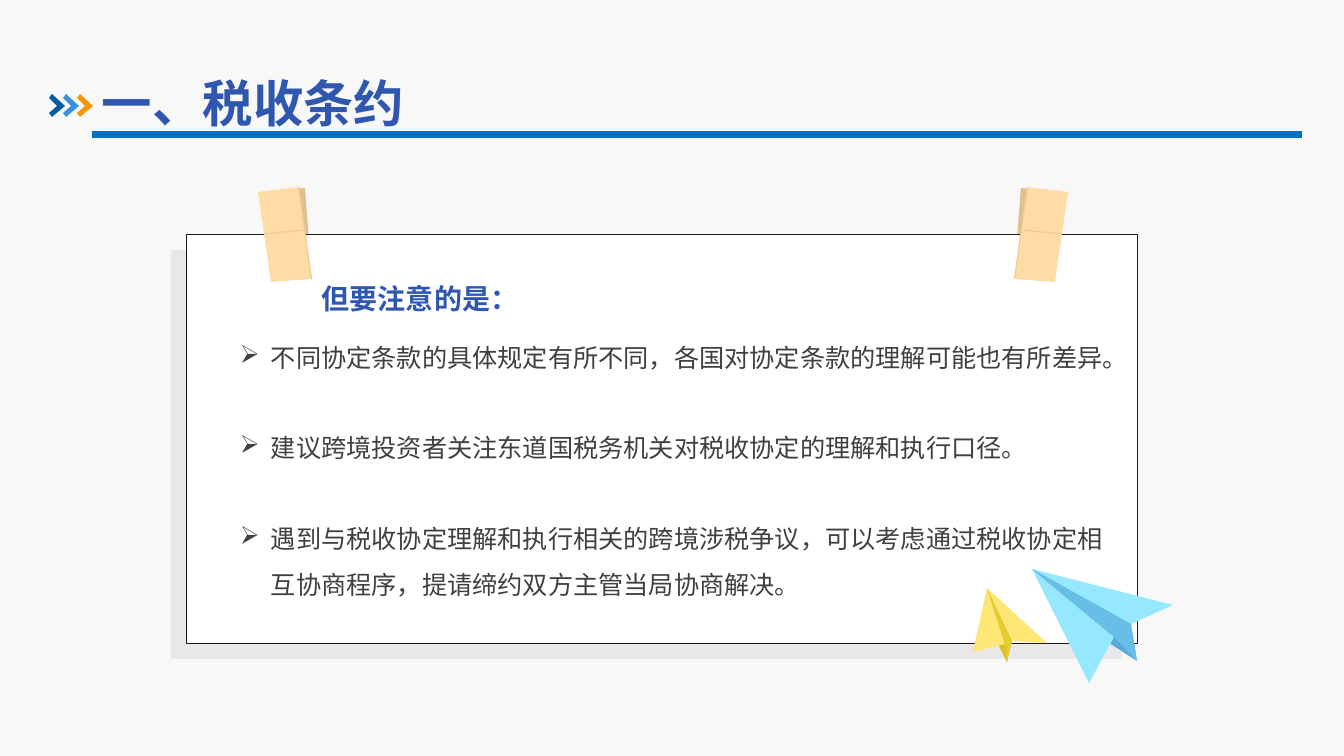
"""Build the tax treaty slide with its pinned note card and paper planes."""
from lxml import etree
from pptx import Presentation
from pptx.dml.color import RGBColor
from pptx.enum.shapes import MSO_CONNECTOR, MSO_SHAPE
from pptx.oxml.ns import qn
from pptx.util import Emu, Pt

STRAIGHT = MSO_CONNECTOR.STRAIGHT
RECTANGLE = MSO_SHAPE.RECTANGLE
EMU_PER_PX = 914400 / 100.8
FONT = "Noto Sans CJK SC"

BACKGROUND = RGBColor(0xF8, 0xF8, 0xF8)
RULE_BLUE = RGBColor(0x00, 0x70, 0xC0)
HEADING_BLUE = RGBColor(0x2F, 0x57, 0xAF)
BODY_GRAY = RGBColor(0x40, 0x40, 0x40)
WHITE = RGBColor(0xFF, 0xFF, 0xFF)
CARD_BORDER = RGBColor(0x23, 0x18, 0x15)
CARD_SHADE = RGBColor(0xE8, 0xE8, 0xE8)
TAPE_BACK = RGBColor(0xDE, 0xBF, 0x90)
TAPE_FRONT = RGBColor(0xFF, 0xDB, 0xA6)
TAPE_EDGE = RGBColor(0xEB, 0xCA, 0x98)
TAPE_CREASE = RGBColor(0xEB, 0xC9, 0x99)
CHEVRON_COLORS = (RGBColor(0x00, 0x5D, 0xA2), RGBColor(0x39, 0x92, 0xDB),
                  RGBColor(0xF7, 0x96, 0x00))
BLUE_PLANE = (RGBColor(0x57, 0xA9, 0xD9), RGBColor(0x96, 0xE8, 0xFF),
              RGBColor(0x67, 0xBE, 0xE6))
YELLOW_PLANE = (RGBColor(0xD9, 0xC0, 0x24), RGBColor(0xFF, 0xE7, 0x75),
                RGBColor(0xE6, 0xCB, 0x31))

CHEVRON = ((49, 98), (52, 94), (65, 106), (52, 117), (49, 113), (57, 106))
CHEVRON_STEP = 14
BACK_STRIP = ((271, 282), (312, 279), (305, 188), (264, 192))
FRONT_STRIP = ((271, 282), (312, 279), (299, 187), (258, 192))
STRIP_EDGE = ((299, 187), (312, 279), (311, 279), (298, 187))
CREASE = ((264, 234), (304, 230))
MIRROR_SUM = 1326

ADVICE = (
    "不同协定条款的具体规定有所不同，各国对协定条款的理解可能也有所差异。",
    "建议跨境投资者关注东道国税务机关对税收协定的理解和执行口径。",
    "遇到与税收协定理解和执行相关的跨境涉税争议，可以考虑通过税收协定相互协商程序，提请缔约双方主管当局协商解决。",
)


def px(length):
    """Turn pixels into EMU."""
    return Emu(round(length * EMU_PER_PX))


def mirrored(points):
    """Reflect points across the middle of the card."""
    return tuple((MIRROR_SUM - x, y) for x, y in points)


def add_polygon(slide, points, color):
    """Draw a closed filled outline."""
    builder = slide.shapes.build_freeform(*points[0], scale=EMU_PER_PX)
    builder.add_line_segments(points[1:], close=True)
    polygon = builder.convert_to_shape()
    polygon.shadow.inherit = False
    polygon.fill.solid()
    polygon.fill.fore_color.rgb = color
    polygon.line.fill.background()


def add_panel(slide, left, top, fill, border=None):
    """Draw a sheet of the note card's size."""
    panel = slide.shapes.add_shape(RECTANGLE, px(left), px(top), px(951), px(409))
    panel.shadow.inherit = False
    panel.fill.solid()
    panel.fill.fore_color.rgb = fill
    if border is None:
        panel.line.fill.background()
    else:
        panel.line.color.rgb = border
        panel.line.width = Pt(0.75)


def add_line(slide, start, end, color, width):
    """Draw a straight line without shadow."""
    line = slide.shapes.add_connector(
        STRAIGHT, px(start[0]), px(start[1]), px(end[0]), px(end[1]))
    line.line.color.rgb = color
    line.line.width = Pt(width)
    etree.SubElement(line._element.spPr, qn("a:effectLst"))


def add_plane(slide, colors, nose, tail, keel, crease, hinge, left_tip, right_tip):
    """Draw a folded paper plane."""
    dark, wing, fold = colors
    add_polygon(slide, (tail, keel, nose, hinge), dark)
    add_polygon(slide, (nose, crease, left_tip), wing)
    add_polygon(slide, (hinge, nose, right_tip), wing)
    add_polygon(slide, (tail, crease, nose, hinge), fold)


def add_text_frame(slide, left, top, width, height):
    """Add a wrapping text box and return its frame."""
    frame = slide.shapes.add_textbox(px(left), px(top), px(width), px(height)).text_frame
    frame.word_wrap = True
    return frame


def style_paragraph(paragraph, size, color, bold=False, spacing=1.0):
    """Set the font and line spacing of a paragraph."""
    paragraph.line_spacing = spacing
    font = paragraph.font
    font.size = Pt(size)
    font.bold = bold
    font.color.rgb = color
    font.name = FONT
    defaults = paragraph._p.get_or_add_pPr().find(qn("a:defRPr"))
    etree.SubElement(defaults, qn("a:ea"), typeface=FONT)


def add_bullet(paragraph):
    """Give a paragraph an arrow bullet with a hanging indent."""
    properties = paragraph._p.get_or_add_pPr()
    properties.set("marL", str(px(31)))
    properties.set("indent", str(-px(31)))
    etree.SubElement(properties, qn("a:buChar"), char="➢")


def add_header(slide):
    """Draw the title with its rule and chevrons."""
    add_line(slide, (92, 135), (1302, 135), RULE_BLUE, 5)
    for index, color in enumerate(CHEVRON_COLORS):
        add_polygon(slide, [(x + index * CHEVRON_STEP, y) for x, y in CHEVRON], color)
    frame = add_text_frame(slide, 102, 72, 1242, 61)
    frame.margin_left = frame.margin_right = frame.margin_top = frame.margin_bottom = 0
    title = frame.paragraphs[0]
    title.text = "一、税收条约"
    style_paragraph(title, 36, HEADING_BLUE, bold=True)


def add_taped_card(slide):
    """Draw the note card held by two strips of tape."""
    sides = (tuple, mirrored)
    add_panel(slide, 171, 250, CARD_SHADE)
    for side in sides:
        add_polygon(slide, side(BACK_STRIP), TAPE_BACK)
    add_panel(slide, 187, 235, WHITE, CARD_BORDER)
    for side in sides:
        add_polygon(slide, side(FRONT_STRIP), TAPE_FRONT)
        add_polygon(slide, side(STRIP_EDGE), TAPE_EDGE)
        add_line(slide, *side(CREASE), TAPE_CREASE, 0.75)


def add_advice(slide):
    """Write the bulleted advice and its heading."""
    frame = add_text_frame(slide, 230, 322, 885, 285)
    for index, advice in enumerate(ADVICE):
        paragraph = frame.add_paragraph() if index else frame.paragraphs[0]
        paragraph.text = advice
        add_bullet(paragraph)
        style_paragraph(paragraph, 18, BODY_GRAY, spacing=1.5)
        if index:
            paragraph.space_before = Pt(32.4)
    heading = add_text_frame(slide, 312, 260, 586, 60).paragraphs[0]
    heading.text = "但要注意的是："
    style_paragraph(heading, 20, HEADING_BLUE, bold=True, spacing=1.5)


def main():
    """Build and save the slide."""
    deck = Presentation()
    deck.slide_width, deck.slide_height = px(1344), px(756)
    slide = deck.slides.add_slide(deck.slide_layouts[6])
    slide.background.fill.solid()
    slide.background.fill.fore_color.rgb = BACKGROUND
    add_header(slide)
    add_taped_card(slide)
    add_plane(slide, BLUE_PLANE, nose=(1032, 569), tail=(1137, 661),
              keel=(1109, 643), crease=(1114, 637), hinge=(1131, 624),
              left_tip=(1089, 683), right_tip=(1173, 605))
    add_plane(slide, YELLOW_PLANE, nose=(987, 588), tail=(1007, 662),
              keel=(999, 646), crease=(1005, 644), hinge=(1012, 641),
              left_tip=(973, 652), right_tip=(1047, 643))
    add_advice(slide)
    deck.save("out.pptx")


if __name__ == "__main__":
    main()
